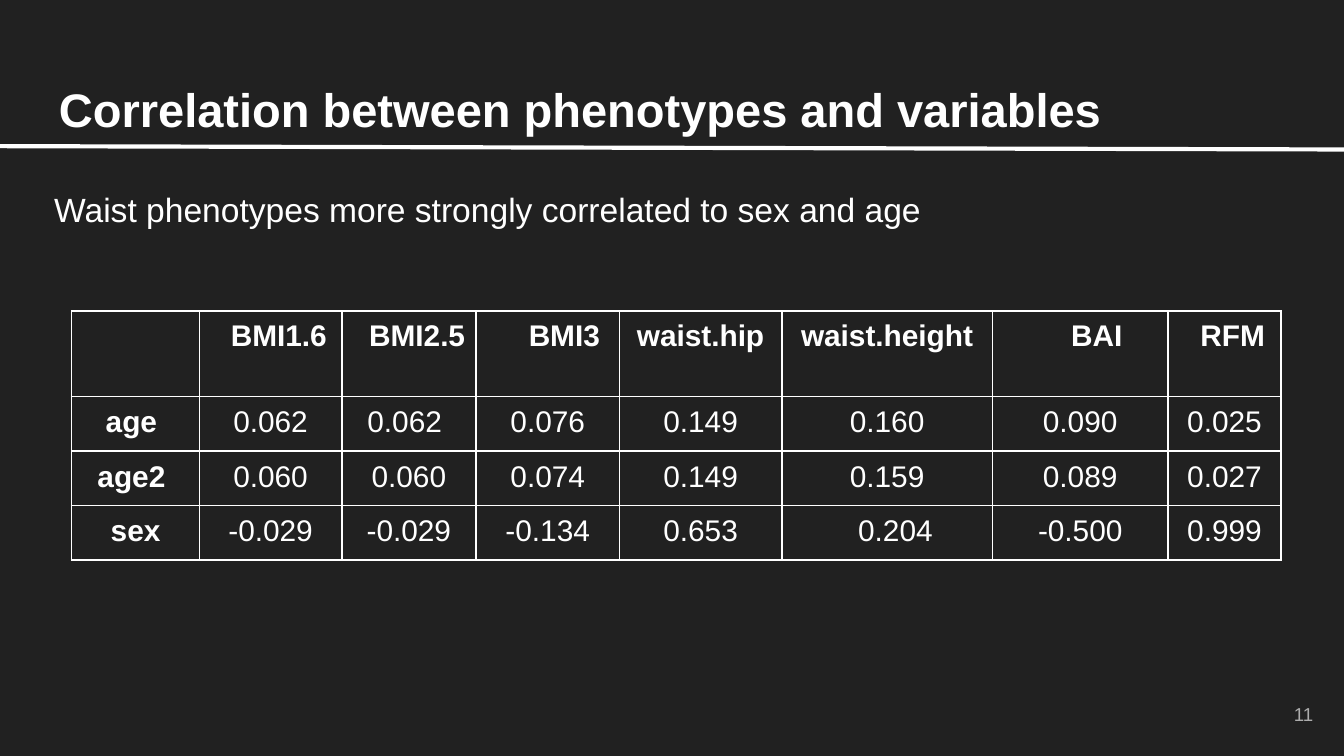
from lxml import etree
from pptx import Presentation
from pptx.dml.color import RGBColor
from pptx.enum.shapes import MSO_CONNECTOR
from pptx.enum.text import MSO_ANCHOR, PP_ALIGN
from pptx.oxml.ns import qn
from pptx.util import Pt

STRAIGHT = MSO_CONNECTOR.STRAIGHT
TOP, MIDDLE, BOTTOM = MSO_ANCHOR.TOP, MSO_ANCHOR.MIDDLE, MSO_ANCHOR.BOTTOM
LEFT, CENTER, RIGHT = PP_ALIGN.LEFT, PP_ALIGN.CENTER, PP_ALIGN.RIGHT

FONT = "Arial"
DARK, WHITE, GREY = "212121", "FFFFFF", "ADADAD"

TITLE = "Correlation between phenotypes and variables"
SUBTITLE = "Waist phenotypes more strongly correlated to sex and age"
PAGE_NUMBER = "11"

ROWS = [
    ["", "BMI1.6", "BMI2.5", "BMI3", "waist.hip", "waist.height", "BAI", "RFM"],
    ["age", "0.062", "0.062", "0.076", "0.149", "0.160", "0.090", "0.025"],
    ["age2", "0.060", "0.060", "0.074", "0.149", "0.159", "0.089", "0.027"],
    ["sex", "-0.029", "-0.029", "-0.134", "0.653", "0.204", "-0.500", "0.999"],
]
COLUMN_WIDTHS = [68.4, 76.3, 71.9, 76.9, 87, 112.8, 94.1, 60.5]
ROW_HEIGHTS = [46, 28, 28, 28]
CELL_MARGIN = 5
SPACE = 4.45
LEADING_SPACES = {(0, 1): 2, (0, 2): 2, (0, 3): 4, (0, 6): 4, (0, 7): 2, (3, 5): 2}
TRAILING_SPACES = {(1, 0): 1, (2, 0): 1, (1, 2): 1}


def color(value):
    return RGBColor.from_string(value)


def style(paragraph, size, shade, bold=False, align=LEFT):
    paragraph.alignment = align
    for span in paragraph.runs:
        span.font.name = FONT
        span.font.size = Pt(size)
        span.font.bold = bold
        span.font.color.rgb = color(shade)


def add_text(page, text, place, size, shade=WHITE, bold=False, align=LEFT, anchor=TOP, indent=0):
    box = page.shapes.add_textbox(*map(Pt, place))
    frame = box.text_frame
    frame.word_wrap = True
    frame.vertical_anchor = anchor
    frame.margin_top = frame.margin_right = frame.margin_bottom = Pt(7.2)
    frame.margin_left = Pt(7.2 + indent)
    frame.text = text
    style(frame.paragraphs[0], size, shade, bold, align)


def add_borders(cell):
    properties = cell._tc.get_or_add_tcPr()
    for index, side in enumerate(("a:lnL", "a:lnR", "a:lnT", "a:lnB")):
        line = etree.Element(qn(side), w=str(Pt(1)))
        fill = etree.SubElement(line, qn("a:solidFill"))
        etree.SubElement(fill, qn("a:srgbClr"), val=WHITE)
        properties.insert(index, line)


def add_correlations(page):
    place = (38.4, 166.5, sum(COLUMN_WIDTHS), sum(ROW_HEIGHTS))
    table = page.shapes.add_table(len(ROWS), len(COLUMN_WIDTHS), *map(Pt, place)).table
    for column, width in zip(table.columns, COLUMN_WIDTHS):
        column.width = Pt(width)
    for row, height in zip(table.rows, ROW_HEIGHTS):
        row.height = Pt(height)
    for r, values in enumerate(ROWS):
        for c, value in enumerate(values):
            cell = table.cell(r, c)
            cell.fill.background()
            cell.margin_top = cell.margin_bottom = Pt(CELL_MARGIN)
            cell.margin_left = Pt(CELL_MARGIN + SPACE * LEADING_SPACES.get((r, c), 0))
            cell.margin_right = Pt(CELL_MARGIN + SPACE * TRAILING_SPACES.get((r, c), 0))
            cell.text_frame.text = value
            style(cell.text_frame.paragraphs[0], 16, WHITE, r == 0 or c == 0, CENTER)
            add_borders(cell)


def main():
    deck = Presentation()
    deck.slide_width, deck.slide_height = Pt(720), Pt(405)
    page = deck.slides.add_slide(deck.slide_layouts[6])
    page.background.fill.solid()
    page.background.fill.fore_color.rgb = color(DARK)

    add_text(page, TITLE, (24.5, 35.3, 671, 45.4), 25.2, bold=True, anchor=BOTTOM)
    rule = page.shapes.add_connector(STRAIGHT, Pt(0), Pt(78.3), Pt(720), Pt(80.1))
    rule.line.color.rgb = color(WHITE)
    rule.line.width = Pt(2.25)
    etree.SubElement(rule._element.spPr, qn("a:effectLst"))
    add_correlations(page)
    add_text(page, PAGE_NUMBER, (667.4, 367.2, 43.2, 31), 10, GREY, align=RIGHT, anchor=MIDDLE)
    add_text(page, SUBTITLE, (13, 94, 658.8, 58.3), 18, indent=8.8)
    deck.save("out.pptx")


if __name__ == "__main__":
    main()
